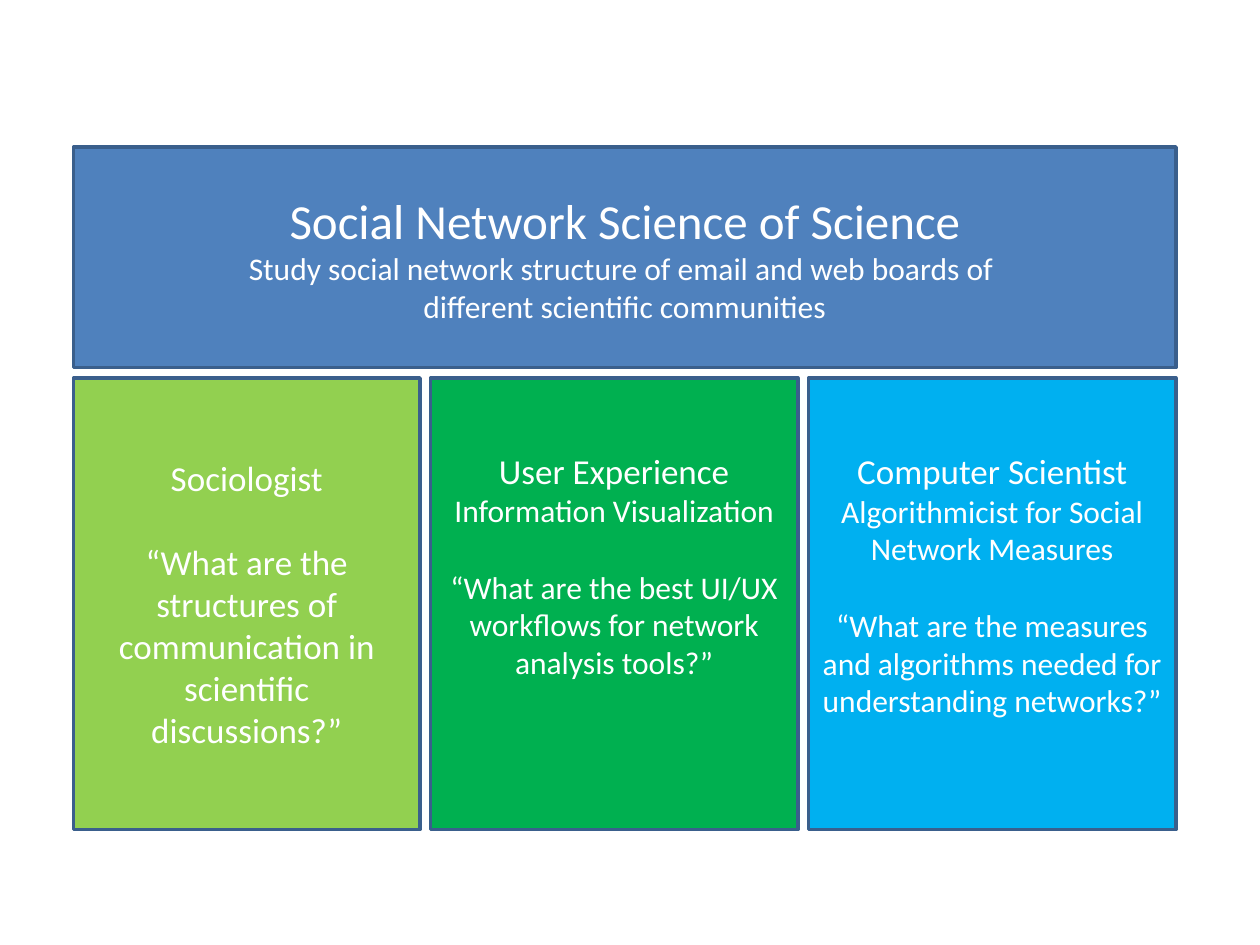
from pptx import Presentation
from pptx import util as u
from pptx.dml.color import RGBColor
from pptx.enum import shapes, text

PX = 914400 // 120
GAP = 10
LEFT, TOP, WIDTH = 70, 140, 1050
BANNER_HEIGHT, ROLE_HEIGHT = 210, 430
INSET_X, INSET_Y = 12, 6
LINE_SPACING = 1.22

ROLES = [
    dict(width=330, fill="92D050", title="Sociologist", focus="", size=20, lift=0,
         question="“What are the structures of communication in scientific discussions?”"),
    dict(width=350, fill="00B050", title="User Experience ",
         focus="Information Visualization", size=18, lift=2,
         question="“What are the best UI/UX workflows for network analysis tools?”"),
    dict(width=350, fill="00B0F0", title="Computer Scientist ",
         focus="Algorithmicist for Social Network Measures", size=18, lift=1,
         question="“What are the measures and algorithms needed for understanding networks?”"),
]


def px(length):
    return u.Emu(round(length * PX))


def color(value):
    return RGBColor.from_string(value)


def write(paragraph, words, size, font="Calibri", fill="FFFFFF"):
    paragraph.alignment = text.PP_ALIGN.CENTER
    run = paragraph.add_run()
    run.text = words
    run.font.name = font
    run.font.size = u.Pt(size)
    run.font.color.rgb = color(fill)


def add_panel(slide, box, fill, extra_bottom=0):
    """Draw a bordered block and return its text frame."""
    panel = slide.shapes.add_shape(shapes.MSO_SHAPE.RECTANGLE, *map(px, box))
    panel.shadow.inherit = False
    panel.fill.solid()
    panel.fill.fore_color.rgb = color(fill)
    panel.line.color.rgb = color("3A5F8C")
    panel.line.width = u.Pt(2)
    frame = panel.text_frame
    frame.word_wrap = True
    frame.vertical_anchor = text.MSO_ANCHOR.MIDDLE
    frame.margin_left = frame.margin_right = px(INSET_X)
    frame.margin_top = px(INSET_Y)
    frame.margin_bottom = px(INSET_Y) + u.Pt(extra_bottom)
    return frame


def add_banner(slide, box):
    heading = add_panel(slide, box, "4F81BD").paragraphs[0]
    write(heading, "Social Network Science of Science", 28)
    heading.add_line_break()
    write(heading, "Study social network structure of email and web boards of ", 18)
    heading.add_line_break()
    write(heading, "different scientific communities", 18)


def add_role(slide, box, role):
    """Draw one role; its lift is the number of text lines kept free below."""
    line_height = role["size"] * LINE_SPACING
    frame = add_panel(slide, box, role["fill"], role["lift"] * line_height)
    heading = frame.paragraphs[0]
    write(heading, role["title"], 20)
    if role["focus"]:
        write(heading, role["focus"], 18)
    question = frame.add_paragraph()
    question.space_before = u.Pt(round(line_height))
    write(question, role["question"], role["size"])


def main():
    deck = Presentation()
    deck.slide_width, deck.slide_height = px(1200), px(900)
    slide = deck.slides.add_slide(deck.slide_layouts[6])
    add_banner(slide, (LEFT, TOP, WIDTH, BANNER_HEIGHT))
    left = LEFT
    for role in ROLES:
        box = (left, TOP + BANNER_HEIGHT + GAP, role["width"], ROLE_HEIGHT)
        add_role(slide, box, role)
        left += role["width"] + GAP
    deck.save("out.pptx")


if __name__ == "__main__":
    main()
